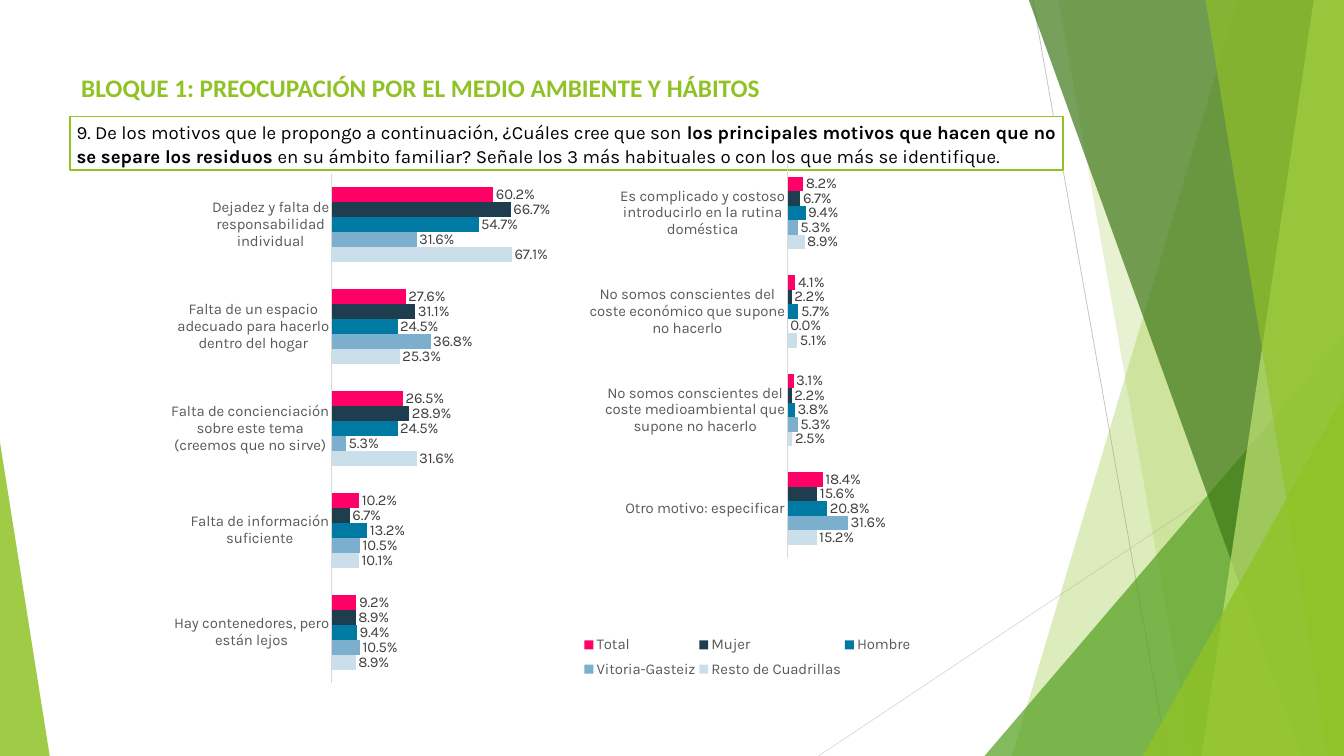
from lxml.etree import SubElement
from pptx import Presentation
from pptx.chart.data import CategoryChartData
from pptx.dml.color import RGBColor
from pptx.enum.chart import XL_CHART_TYPE, XL_LABEL_POSITION, XL_LEGEND_POSITION, XL_TICK_LABEL_POSITION, XL_TICK_MARK
from pptx.enum.shapes import MSO_CONNECTOR, MSO_SHAPE
from pptx.enum.text import MSO_ANCHOR, PP_ALIGN
from pptx.oxml import parse_xml
from pptx.oxml.ns import nsdecls, qn
from pptx.util import Inches, Pt

WIDTH, HEIGHT = 20, 11.25
GREEN = "90C226"
FONT = "Karla"

TITLE = "BLOQUE 1: PREOCUPACIÓN POR EL MEDIO AMBIENTE Y HÁBITOS"
QUESTION = [
    ("9. De los motivos que le propongo a continuación, ¿Cuáles cree que son ", False),
    ("los principales motivos que hacen que no se separe los residuos ", True),
    ("en su ámbito familiar? Señale los 3 más habituales o con los que más se identifique.", False),
]

SERIES = [
    ("Resto de Cuadrillas", "CBDFEB"),
    ("Vitoria-Gasteiz", "7CAECD"),
    ("Hombre", "007AA3"),
    ("Mujer", "1E3D4F"),
    ("Total", "FF0066"),
]
MAIN_REASONS = [
    ("Hay contenedores, pero están lejos", (0.089, 0.105, 0.094, 0.089, 0.092)),
    ("Falta de información suficiente", (0.101, 0.105, 0.132, 0.067, 0.102)),
    ("Falta de concienciación sobre este tema (creemos que no sirve)", (0.316, 0.053, 0.245, 0.289, 0.265)),
    ("Falta de un espacio adecuado para hacerlo dentro del hogar", (0.253, 0.368, 0.245, 0.311, 0.276)),
    ("Dejadez y falta de responsabilidad individual", (0.671, 0.316, 0.547, 0.667, 0.602)),
]
OTHER_REASONS = [
    ("Otro motivo: especificar", (0.152, 0.316, 0.208, 0.156, 0.184)),
    ("No somos conscientes del coste medioambiental que supone no hacerlo", (0.025, 0.053, 0.038, 0.022, 0.031)),
    ("No somos conscientes del coste económico que supone no hacerlo", (0.051, 0, 0.057, 0.022, 0.041)),
    ("Es complicado y costoso introducirlo en la rutina doméstica", (0.089, 0.053, 0.094, 0.067, 0.082)),
]
CHARTS = [
    {"box": (8.64, 2.43, 5.77, 9.3), "reasons": OTHER_REASONS, "maximum": 0.35,
     "plot": (0.534, 0, 0.172, 0.631), "legend": (0, 0.745, 0.86, 0.09)},
    {"box": (2.42, 2.36, 5.77, 9.31), "reasons": MAIN_REASONS, "maximum": 0.8,
     "plot": (0.438, 0.024, 0.556, 0.815), "legend": None},
]

THIN_LINES = [
    ((15.37, 0), (17.37, HEIGHT), "BFBFBF"),
    ((WIDTH, 6.04), (12.18, HEIGHT), "D9D9D9"),
]
# (kind, geometry, colour, opacity)
DECORATION = [
    ("band", (18.42, 15.06), GREEN, 30),
    ("band", (15.75, 17.74), GREEN, 20),
    ("triangle", (14.65, 5, 5.35, 1), "54A021", 72),
    ("band", (15.31, 19.37), "3F7819", 70),
    ("band", (19.55, 17.88), "C0E474", 70),
    ("band", (17.94, 19.76), GREEN, 65),
    ("triangle", (17.01, 5.89, 2.99, 1), GREEN, 80),
    ("triangle", (0, 6.58, 0.74, 0), GREEN, 85),
]


def color(value):
    return RGBColor.from_string(value)


def inches(values):
    return [Inches(value) for value in values]


def style_font(font, size, value, name=FONT, bold=False):
    font.size, font.name, font.bold = Pt(size), name, bold
    font.color.rgb = color(value)


def fill_shape(shape, value, opacity=100):
    shape.shadow.inherit = False
    shape.fill.solid()
    shape.fill.fore_color.rgb = color(value)
    shape.line.fill.background()
    if opacity < 100:
        tint = shape._element.spPr.find(qn("a:solidFill"))[0]
        SubElement(tint, qn("a:alpha")).set("val", str(opacity * 1000))


def add_thin_line(slide, start, end, value):
    line = slide.shapes.add_connector(MSO_CONNECTOR.STRAIGHT, *inches(start + end))
    line.line.color.rgb = color(value)
    line.line.width = Pt(0.75)
    SubElement(line._element.spPr, qn("a:effectLst"))


def add_decoration(slide, kind, geometry, value, opacity):
    if kind == "band":
        top, bottom = geometry
        corners = [(WIDTH, 0), (WIDTH, HEIGHT), (bottom, HEIGHT)]
        builder = slide.shapes.build_freeform(Inches(top), 0)
        builder.add_line_segments([inches(corner) for corner in corners], close=True)
        shape = builder.convert_to_shape()
    else:
        left, top, width, apex = geometry
        box = inches((left, top, width, HEIGHT - top))
        shape = slide.shapes.add_shape(MSO_SHAPE.ISOSCELES_TRIANGLE, *box)
        shape.adjustments[0] = apex
    fill_shape(shape, value, opacity)


def write_text(shape, runs, size, value, name):
    frame = shape.text_frame
    frame.word_wrap = True
    frame.vertical_anchor = MSO_ANCHOR.TOP
    paragraph = frame.paragraphs[0]
    paragraph.alignment = PP_ALIGN.LEFT
    paragraph.line_spacing = 1.07
    paragraph.space_after = Pt(12)
    for text, bold in runs:
        run = paragraph.add_run()
        run.text = text
        style_font(run.font, size, value, name, bold)


def manual_layout(box, inner=False):
    target = '<c:layoutTarget val="inner"/>' if inner else ""
    modes = "".join(f'<c:{key}Mode val="edge"/>' for key in "xy")
    sizes = "".join(f'<c:{key} val="{share}"/>' for key, share in zip("xywh", box))
    return parse_xml(f'<c:layout {nsdecls("c")}><c:manualLayout>{target}{modes}{sizes}'
                     "</c:manualLayout></c:layout>")


def drop_layout(element):
    for layout in element.findall(qn("c:layout")):
        element.remove(layout)


def add_bar_chart(slide, box, reasons, maximum, plot, legend):
    data = CategoryChartData(number_format="0.0%")
    data.categories = [reason for reason, _ in reasons]
    for index, (name, _) in enumerate(SERIES):
        data.add_series(name, [values[index] for _, values in reasons])
    chart = slide.shapes.add_chart(XL_CHART_TYPE.BAR_CLUSTERED, *inches(box), data).chart
    chart.has_title = False
    style_font(chart.font, 16, "000000")

    bars = chart.plots[0]
    bars.gap_width, bars.overlap, bars.vary_by_categories = 182, 0, False
    for series, (_, value) in zip(bars.series, SERIES):
        series.format.fill.solid()
        series.format.fill.fore_color.rgb = color(value)
        series.invert_if_negative = False
        labels = series.data_labels
        labels.show_value = True
        labels.position = XL_LABEL_POSITION.OUTSIDE_END
        labels.number_format, labels.number_format_is_linked = "0.0%", False
        style_font(labels.font, 16, "404040")

    categories = chart.category_axis
    categories.major_tick_mark = categories.minor_tick_mark = XL_TICK_MARK.NONE
    categories.tick_label_position = XL_TICK_LABEL_POSITION.NEXT_TO_AXIS
    categories.format.line.color.rgb = color("D9D9D9")
    categories.format.line.width = Pt(0.75)
    style_font(categories.tick_labels.font, 16, "595959")
    scale = chart.value_axis
    scale.minimum_scale, scale.maximum_scale = 0, maximum
    scale.has_major_gridlines = scale.visible = False

    plot_area = chart._chartSpace.chart.plotArea
    drop_layout(plot_area)
    plot_area.insert(0, manual_layout(plot, inner=True))
    chart.has_legend = legend is not None
    if legend:
        chart.legend.position = XL_LEGEND_POSITION.RIGHT
        chart.legend.include_in_layout = False
        style_font(chart.legend.font, 16, "595959")
        element = chart.legend._element
        drop_layout(element)
        element.find(qn("c:legendPos")).addnext(manual_layout(legend))


def main():
    presentation = Presentation()
    presentation.slide_width, presentation.slide_height = inches((WIDTH, HEIGHT))
    slide = presentation.slides.add_slide(presentation.slide_layouts[6])
    for line in THIN_LINES:
        add_thin_line(slide, *line)
    for part in DECORATION:
        add_decoration(slide, *part)

    question = slide.shapes.add_shape(MSO_SHAPE.RECTANGLE, *inches((1.04, 1.73, 14.78, 0.8)))
    fill_shape(question, "FFFFFF")
    question.line.color.rgb = color(GREEN)
    question.line.width = Pt(1.5)
    write_text(question, QUESTION, 20, "000000", FONT)

    for chart in CHARTS:
        add_bar_chart(slide, **chart)
    title = slide.shapes.add_textbox(*inches((1.11, 1, 14.1, 2.17)))
    write_text(title, [(TITLE, True)], 27, GREEN, "Calibri")
    presentation.save("out.pptx")


if __name__ == "__main__":
    main()
